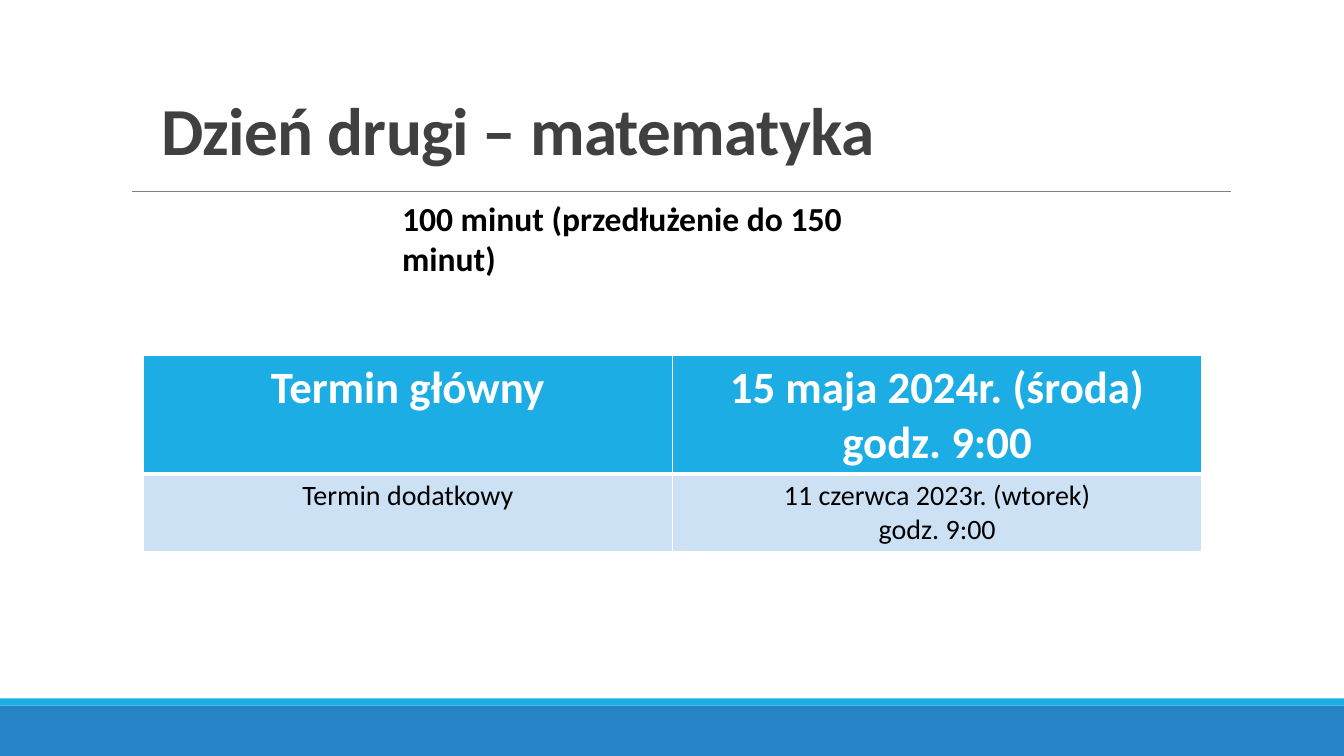
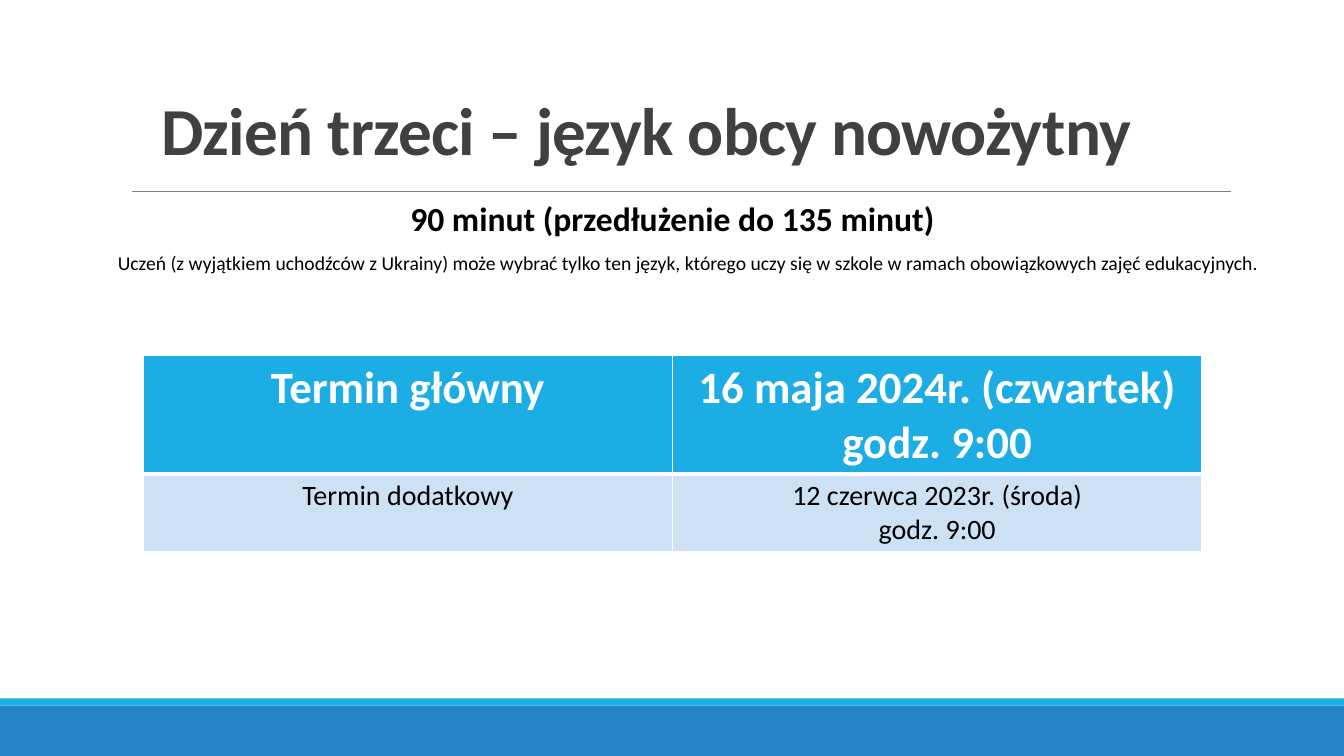
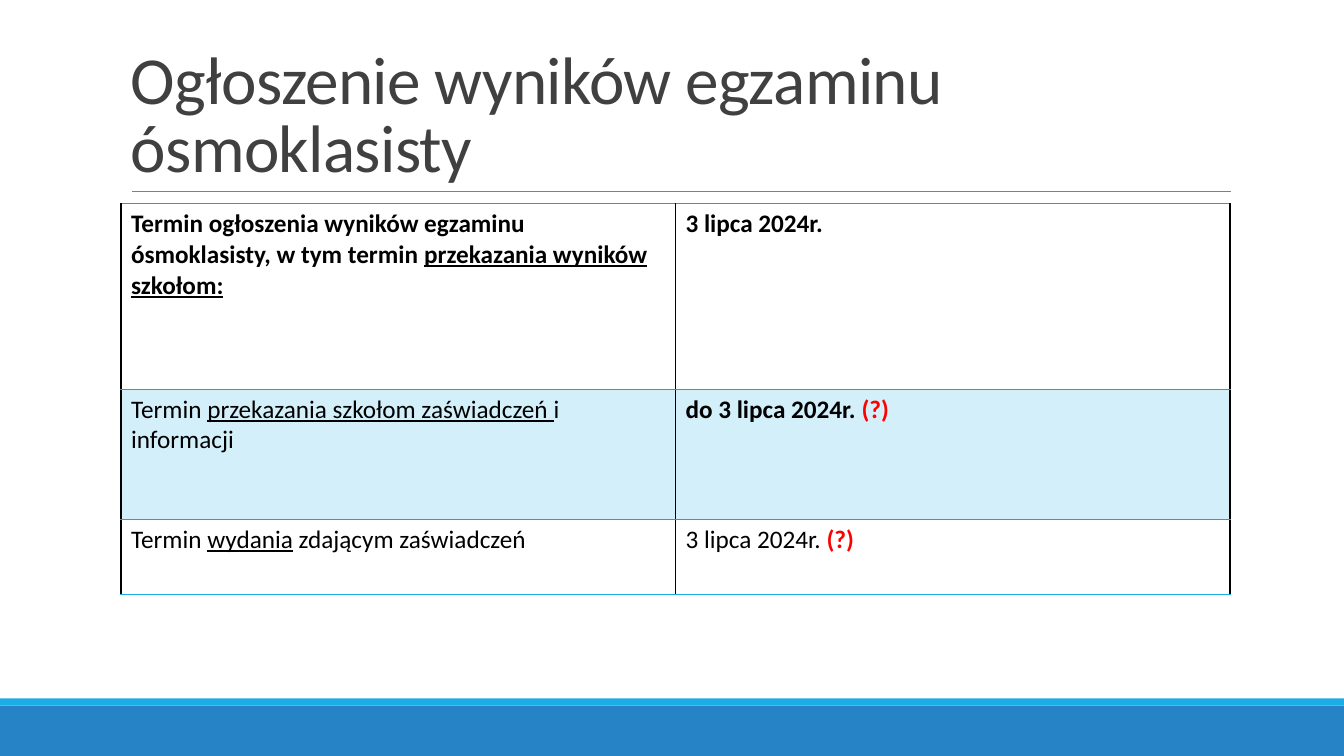
from lxml import etree
from pptx import Presentation
from pptx.dml.color import RGBColor
from pptx.enum.shapes import MSO_CONNECTOR, MSO_SHAPE
from pptx.enum.text import MSO_ANCHOR, PP_ALIGN
from pptx.oxml.ns import qn
from pptx.util import Inches, Pt

RECT = MSO_SHAPE.RECTANGLE
STRAIGHT = MSO_CONNECTOR.STRAIGHT
TOP, BOTTOM = MSO_ANCHOR.TOP, MSO_ANCHOR.BOTTOM
LEFT, CENTER = PP_ALIGN.LEFT, PP_ALIGN.CENTER

FONT = "Calibri"
COLORS = {
    "band": "2683C6",
    "accent": "1CADE4",
    "rule": "808080",
    "title": "404040",
    "text": "000000",
    "white": "FFFFFF",
    "pale_blue": "CCE2F4",
    "tint": "D2EFFA",
    "red": "FF0000",
}
SLIDE_W, SLIDE_H = 13.33, 7.5
BOLD = {"bold": True}
UNDERLINE = {"underline": True}
QUESTION = ("(?)", {"bold": True, "color": "red"})


def rgb(name):
    return RGBColor.from_string(COLORS[name])


# Text
def write(tf, runs, size, color="text", bold=False, align=LEFT):
    """Fill a text frame with one paragraph; runs are (text, style) pairs."""
    p = tf.paragraphs[0]
    p.alignment = align
    p.font.name = FONT
    p.font.size = Pt(size)
    p.font.bold = bold
    p.font.color.rgb = rgb(color)
    for text, style in runs:
        for i, line in enumerate(text.split("\n")):
            if i:
                p.add_line_break()
            r = p.add_run()
            r.text = line
            if "bold" in style:
                r.font.bold = style["bold"]
            if "underline" in style:
                r.font.underline = style["underline"]
            if "color" in style:
                r.font.color.rgb = rgb(style["color"])
    return p


def add_text(s, box, text, size, anchor=TOP, **style):
    tf = s.shapes.add_textbox(*map(Inches, box)).text_frame
    tf.word_wrap = True
    tf.vertical_anchor = anchor
    return write(tf, [(text, {})], size, **style)


def add_title(s, box, text, bold):
    p = add_text(s, box, text, 48, anchor=BOTTOM, color="title", bold=bold)
    p.line_spacing = 0.85
    for r in p.runs:
        r._r.get_or_add_rPr().set("spc", "-50")


# Shared frame: bottom bands and the rule under the title
def add_band(s, top, height, color):
    sp = s.shapes.add_shape(RECT, 0, Inches(top), Inches(SLIDE_W), Inches(height))
    sp.shadow.inherit = False
    sp.fill.solid()
    sp.fill.fore_color.rgb = rgb(color)
    sp.line.fill.background()


def new_slide(prs):
    s = prs.slides.add_slide(prs.slide_layouts[6])
    add_band(s, 7, 0.5, "band")
    add_band(s, 6.93, 0.07, "accent")
    rule = s.shapes.add_connector(
        STRAIGHT, Inches(1.31), Inches(1.9), Inches(12.21), Inches(1.9))
    rule.line.color.rgb = rgb("rule")
    rule.line.width = Pt(0.5)
    etree.SubElement(rule._element.spPr, qn("a:effectLst"))
    return s


# Tables
def set_borders(cell, **sides):
    """Each side (L, R, T, B) is a (colour, points) pair."""
    tcPr = cell._tc.get_or_add_tcPr()
    for i, side in enumerate(side for side in "LRTB" if side in sides):
        color, width = sides[side]
        ln = etree.Element(qn("a:ln" + side), w=str(Pt(width)))
        fill = etree.SubElement(ln, qn("a:solidFill"))
        etree.SubElement(fill, qn("a:srgbClr"), val=COLORS[color])
        tcPr.insert(i, ln)


def set_fill(cell, color):
    if color:
        cell.fill.solid()
        cell.fill.fore_color.rgb = rgb(color)
    else:
        cell.fill.background()


def add_table(s, left, top, width, heights):
    """Add a plain two-column table."""
    table = s.shapes.add_table(len(heights), 2, Inches(left), Inches(top),
                               Inches(width), Inches(sum(heights))).table
    table.first_row = False
    table.horz_banding = False
    for row, height in zip(table.rows, heights):
        row.height = Inches(height)
    return table


def add_dates_table(s, main_date, extra_date):
    table = add_table(s, 1.42, 3.53, 10.5, [1.17, 0.77])
    thin, thick = ("white", 0.96), ("white", 3)
    rows = [
        (("Termin główny", main_date), "accent", 32, "white", True, thin, thick),
        (("Termin dodatkowy", extra_date), "pale_blue", 20, "text", False, thick, thin),
    ]
    for r, (texts, fill, size, color, bold, above, below) in enumerate(rows):
        for c, text in enumerate(texts):
            cell = table.cell(r, c)
            set_fill(cell, fill)
            set_borders(cell, L=thin, R=thin, T=above, B=below)
            write(cell.text_frame, [(text, {})], size, color, bold, CENTER)


def add_results_table(s):
    rows = [
        (None, 1.84,
         [("Termin ogłoszenia wyników egzaminu ósmoklasisty, w tym termin ", BOLD),
          ("przekazania wyników szkołom:", {**BOLD, **UNDERLINE})],
         [("3 lipca 2024r.", BOLD)]),
        ("tint", 1.29,
         [("Termin ", {}), ("przekazania szkołom zaświadczeń ", UNDERLINE),
          ("i informacji", {})],
         [("do 3 lipca 2024r. ", BOLD), QUESTION]),
        (None, 0.75,
         [("Termin ", {}), ("wydania", UNDERLINE), (" zdającym zaświadczeń", {})],
         [("3 lipca 2024r. ", {}), QUESTION]),
    ]
    table = add_table(s, 1.2, 2.02, 11, [row[1] for row in rows])
    side, inner, last = ("text", 1), ("rule", 0.5), ("accent", 0.96)
    for r, (fill, _, *cells) in enumerate(rows):
        below = last if r == len(rows) - 1 else inner
        for c, runs in enumerate(cells):
            cell = table.cell(r, c)
            set_fill(cell, fill)
            set_borders(cell, L=side, R=side, T=inner, B=below)
            write(cell.text_frame, runs, 18)


# Slides
def add_exam_slide(prs, title, main_date, extra_date):
    s = new_slide(prs)
    add_title(s, (1.5, 0.75, 10.5, 0.98), title, bold=True)
    add_dates_table(s, main_date, extra_date)
    return s


def main():
    prs = Presentation()
    prs.slide_width, prs.slide_height = Inches(SLIDE_W), Inches(SLIDE_H)

    # Mathematics
    s = add_exam_slide(prs, "Dzień drugi – matematyka",
                       "15 maja 2024r. (środa) godz. 9:00",
                       "11 czerwca 2023r. (wtorek)\ngodz. 9:00")
    add_text(s, (3.89, 1.91, 5.5, 0.5),
             "100 minut (przedłużenie do 150 minut)", 24, bold=True)

    # Foreign language
    s = add_exam_slide(prs, "Dzień trzeci – język obcy nowożytny",
                       "16 maja 2024r. (czwartek) godz. 9:00",
                       "12 czerwca 2023r. (środa)\ngodz. 9:00")
    add_text(s, (2.49, 1.91, 8.36, 0.5),
             "90 minut (przedłużenie do 135 minut)", 24, bold=True, align=CENTER)
    add_text(s, (1.07, 2.44, 11.92, 0.33),
             "Uczeń (z wyjątkiem uchodźców z Ukrainy) może wybrać tylko ten język, "
             "którego uczy się w szkole w ramach obowiązkowych zajęć edukacyjnych.", 14)

    # Results
    s = new_slide(prs)
    add_title(s, (1.2, 0.31, 11, 1.59),
              "Ogłoszenie wyników egzaminu ósmoklasisty", bold=False)
    add_results_table(s)

    prs.save("out.pptx")


if __name__ == "__main__":
    main()
